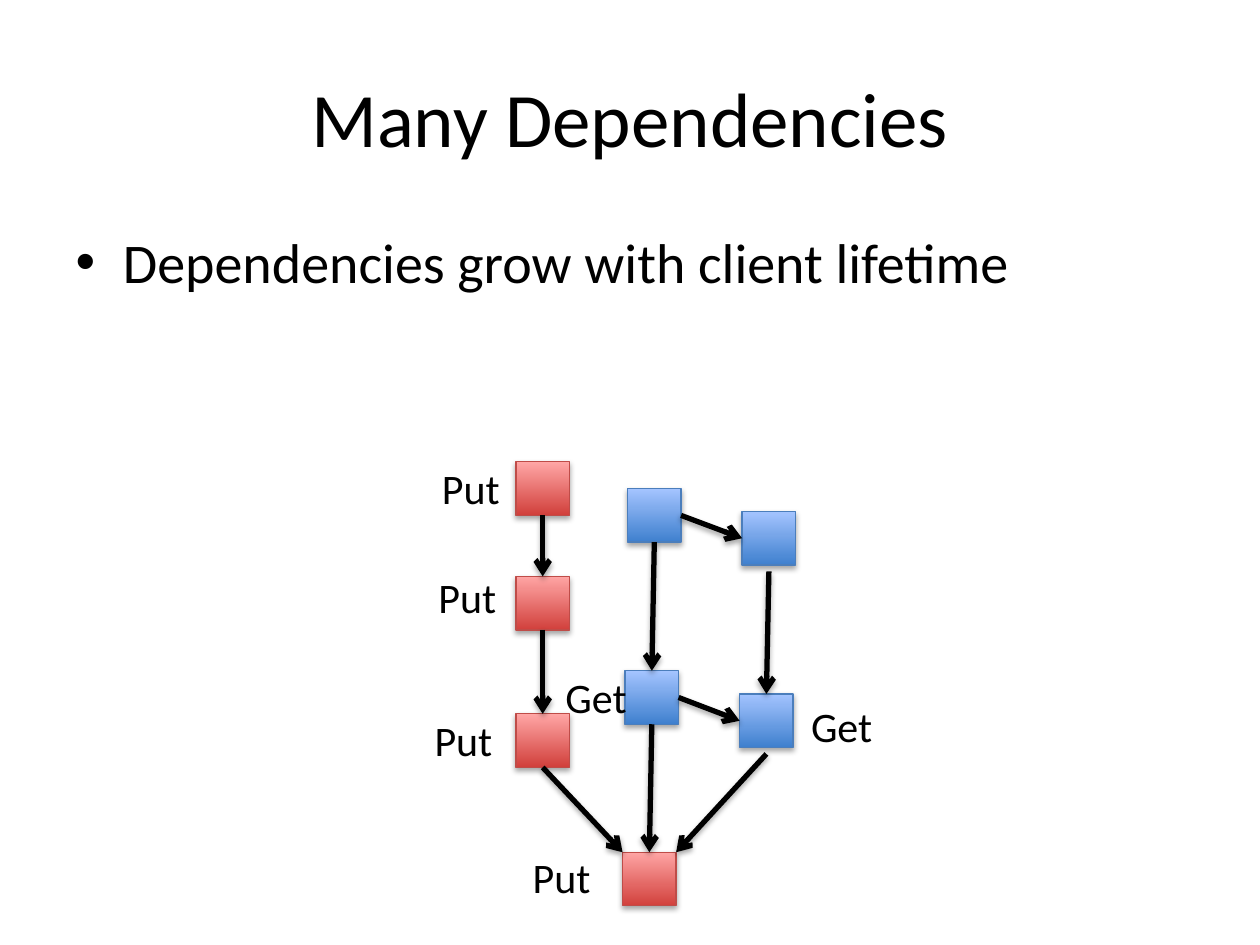
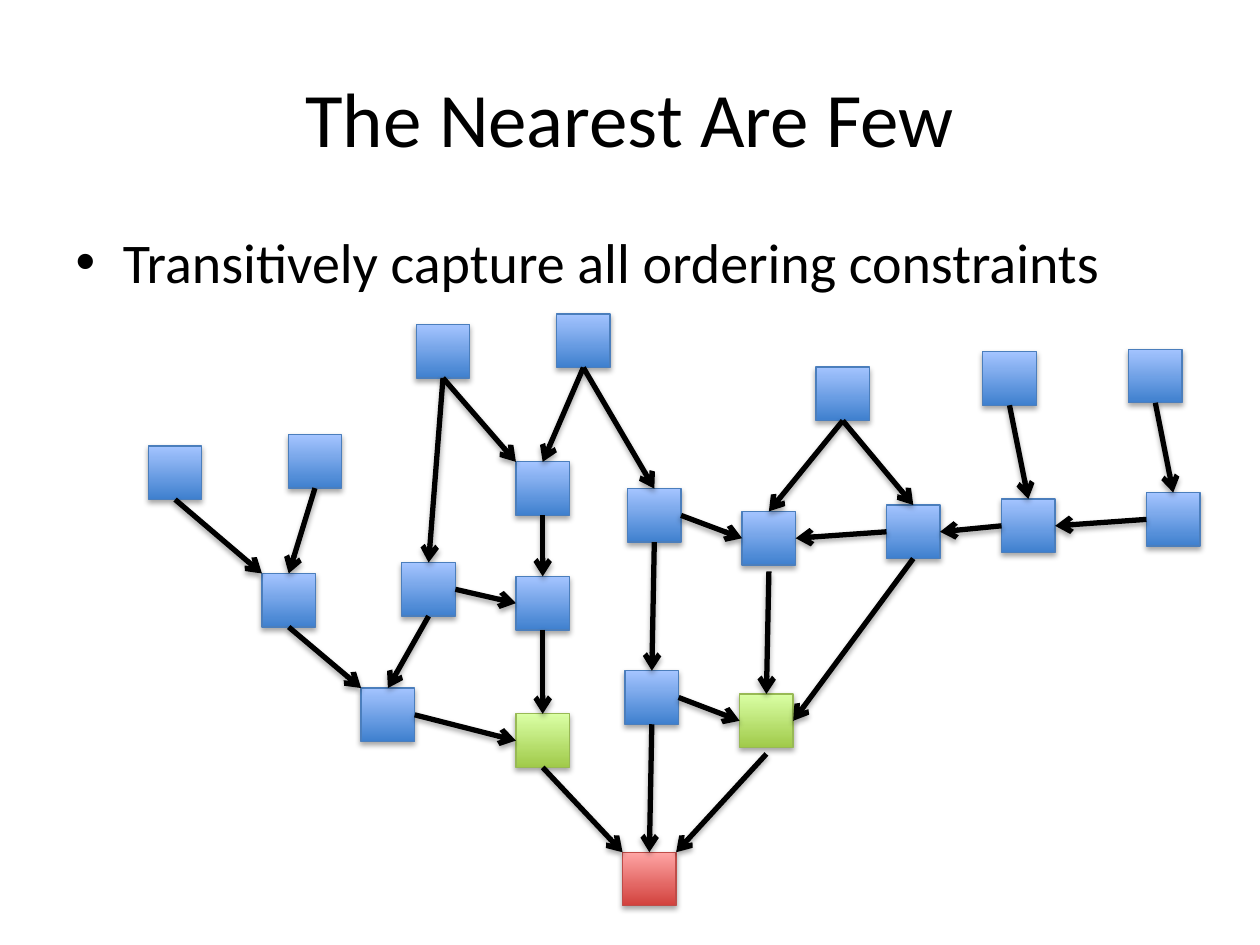
from lxml.etree import SubElement
from pptx import Presentation
from pptx.dml.color import RGBColor
from pptx.enum.shapes import MSO_CONNECTOR as Connector, MSO_SHAPE as Shape
from pptx.enum.text import MSO_ANCHOR as Anchor, MSO_AUTO_SIZE as AutoSize, PP_ALIGN as Align
from pptx.oxml.ns import qn
from pptx.util import Cm, Pt

FONT = "Calibri"
COLORS = {
    "ink": "000000",
    "blue": ("3F80CE", "A4C4FF", "4B7EBC"),  # bottom, top, outline
    "red": ("D1403C", "FFA6A5", "BF4C48"),
    "green": ("A0CA4A", "DAFFA5", "98B955"),
}
NODE = 1.08
SITES = {"top": 0, "left": 1, "bottom": 2, "right": 3}
# Places on a node as shares of its side; "below" leaves a small gap
PLACES = {
    "top": (0.5, 0), "left": (0, 0.5), "bottom": (0.5, 1), "right": (1, 0.5),
    "top_left": (0, 0), "top_right": (1, 0), "below": (0.5, 1.12),
}

CORE_NODES = {
    "chain_1": (10.4, 9.31), "chain_2": (10.4, 11.62), "chain_3": (10.4, 14.39),
    "middle_1": (12.65, 9.85), "middle_2": (12.6, 13.52),
    "right_1": (14.96, 10.31), "right_2": (14.91, 13.99),
    "latest": (12.55, 17.18),
}
CORE_EDGES = [
    ("chain_1", "bottom", "chain_2", "top"),
    ("chain_2", "bottom", "chain_3", "top"),
    ("chain_3", "bottom", "latest", "top_left"),
    ("middle_1", "bottom", "middle_2", "top"),
    ("middle_2", "bottom", "latest", "top"),
    ("middle_1", "right", "right_1", "left"),
    ("middle_2", "right", "right_2", "left"),
    ("right_1", "below", "right_2", "top"),
    ("right_2", "below", "latest", "top_right"),
]
OUTER_NODES = {
    "west_root": (2.99, 8.99), "west_root_2": (5.81, 8.76), "west_join": (5.28, 11.56),
    "west_last": (7.28, 13.87), "branch": (8.1, 11.34), "branch_root": (8.39, 6.54),
    "centre_root": (11.22, 6.33), "east_root": (16.45, 7.4), "east_1": (17.87, 10.18),
    "east_2": (20.19, 10.06), "east_3": (23.11, 9.93),
    "east_root_2": (19.81, 7.09), "east_root_3": (22.75, 7.04),
}
OUTER_EDGES = [
    ("west_root", "bottom", "west_join", "top_left"),
    ("west_root_2", "bottom", "west_join", "top"),
    ("west_join", "bottom", "west_last", "top_left"),
    ("branch", "bottom", "west_last", "top"),
    ("west_last", "right", "chain_3", "left"),
    ("branch", "right", "chain_2", "left"),
    ("branch_root", "bottom", "branch", "top"),
    ("branch_root", "bottom", "chain_1", "top_left"),
    ("centre_root", "bottom", "chain_1", "top"),
    ("centre_root", "bottom", "middle_1", "top"),
    ("east_root", "bottom", "right_1", "top"),
    ("east_root", "bottom", "east_1", "top"),
    ("east_1", "left", "right_1", "right"),
    ("east_1", "bottom", "right_2", "right"),
    ("east_2", "left", "east_1", "right"),
    ("east_3", "left", "east_2", "right"),
    ("east_root_2", "bottom", "east_2", "top"),
    ("east_root_3", "bottom", "east_3", "top"),
]
OPERATIONS = [
    ("Put", 8.66, 9.19), ("Put", 8.59, 11.4), ("Put", 8.51, 14.27),
    ("Put", 10.49, 17.04), ("Get", 11.15, 13.41), ("Get", 16.1, 14),
]


def rgb(value):
    return RGBColor.from_string(value)


def format_text(frame, size):
    for paragraph in frame.paragraphs:
        for run in paragraph.runs:
            run.font.name = FONT
            run.font.size = Pt(size)
            run.font.color.rgb = rgb(COLORS["ink"])


def place(element, left, top, width, height):
    element.left, element.top = Cm(left), Cm(top)
    element.width, element.height = Cm(width), Cm(height)


def add_headed_slide(prs, heading, point, body_width, body_height):
    slide = prs.slides.add_slide(prs.slide_layouts[1])
    title, body = slide.placeholders[0], slide.placeholders[1]
    place(title, 1.27, 0.76, 22.86, 3.18)
    title.text_frame.text = heading
    title.text_frame.vertical_anchor = Anchor.MIDDLE
    title.text_frame.paragraphs[0].alignment = Align.CENTER
    format_text(title.text_frame, 44)
    place(body, 1.27, 4.45, body_width, body_height)
    body.text_frame.text = point
    format_text(body.text_frame, 32)
    return slide


def add_shadow(element):
    """Soft shadow straight below; call it once the line is set."""
    effects = SubElement(element.element.spPr, qn("a:effectLst"))
    shadow = SubElement(effects, qn("a:outerShdw"), blurRad="40000", dist="23000",
                        dir="5400000", rotWithShape="0")
    ink = SubElement(shadow, qn("a:srgbClr"), val=COLORS["ink"])
    SubElement(ink, qn("a:alpha"), val="35000")


def add_node(slide, position, color):
    node = slide.shapes.add_shape(Shape.RECTANGLE, *map(Cm, (*position, NODE, NODE)))
    bottom, top, outline = COLORS[color]
    node.fill.gradient()
    node.fill.gradient_angle = 90
    for stop, shade in zip(node.fill.gradient_stops, (bottom, top)):
        stop.color.rgb = rgb(shade)
    node.line.color.rgb = rgb(outline)
    node.line.width = Pt(0.75)
    add_shadow(node)
    return node


def point_on(node, spot):
    across, down = PLACES[spot]
    return int(node.left + across * node.width), int(node.top + down * node.height)


def add_edge(slide, source, source_spot, target, target_spot):
    edge = slide.shapes.add_connector(
        Connector.STRAIGHT, *point_on(source, source_spot), *point_on(target, target_spot))
    if source_spot in SITES:
        edge.begin_connect(source, SITES[source_spot])
    if target_spot in SITES:
        edge.end_connect(target, SITES[target_spot])
    edge.line.color.rgb = rgb(COLORS["ink"])
    edge.line.width = Pt(3)
    SubElement(edge.element.spPr.find(qn("a:ln")), qn("a:tailEnd"), type="arrow")
    add_shadow(edge)


def add_graph(slide, positions, edges, highlights):
    """Draw the dependency graph; nodes without a highlight are blue."""
    nodes = {name: add_node(slide, position, highlights.get(name, "blue"))
             for name, position in positions.items()}
    for source, source_spot, target, target_spot in edges:
        add_edge(slide, nodes[source], source_spot, nodes[target], target_spot)


def add_operation(slide, name, left, top):
    label = slide.shapes.add_textbox(Cm(left), Cm(top), Cm(1.83), Cm(1.28))
    label.text_frame.word_wrap = True
    label.text_frame.auto_size = AutoSize.SHAPE_TO_FIT_TEXT
    label.text_frame.text = name
    format_text(label.text_frame, 24)


def main():
    prs = Presentation()
    prs.slide_width, prs.slide_height = Cm(25.4), Cm(19.05)

    many = add_headed_slide(prs, "Many Dependencies",
                            "Dependencies grow with client lifetime", 22.86, 12.57)
    puts = ("chain_1", "chain_2", "chain_3", "latest")
    add_graph(many, CORE_NODES, CORE_EDGES, dict.fromkeys(puts, "red"))
    for operation in OPERATIONS:
        add_operation(many, *operation)

    nearest = add_headed_slide(prs, "The Nearest Are Few",
                               "Transitively capture all ordering constraints", 23.47, 3.63)
    add_graph(nearest, CORE_NODES | OUTER_NODES, CORE_EDGES + OUTER_EDGES,
              {"chain_3": "green", "right_2": "green", "latest": "red"})

    prs.save("out.pptx")


if __name__ == "__main__":
    main()
